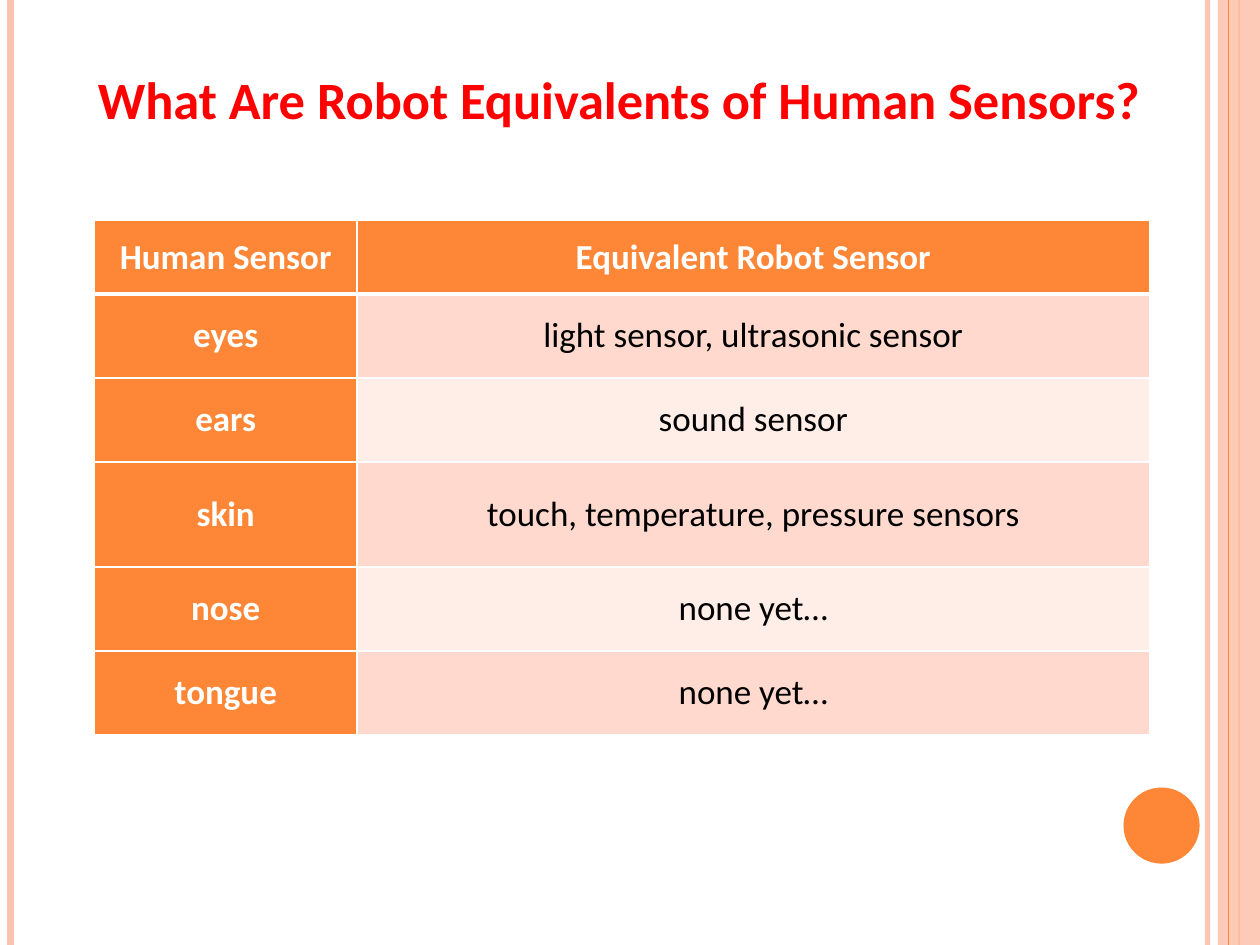
from dataclasses import dataclass

from lxml.etree import SubElement
from pptx import Presentation
from pptx.dml.color import RGBColor
from pptx.enum.shapes import MSO_CONNECTOR, MSO_SHAPE
from pptx.enum.text import MSO_ANCHOR, MSO_AUTO_SIZE, PP_ALIGN
from pptx.oxml.ns import qn
from pptx.util import Emu, Pt

EMU_PER_PX = 9525
WIDTH, HEIGHT = 960, 720


@dataclass(frozen=True)
class Theme:
    font: str = "Calibri"
    title_size: int = 30
    table_size: int = 20
    title: str = "FF0000"
    accent: str = "FE8637"
    pale: str = "FEC3AE"
    bands: tuple = ("FFD9CE", "FFEDE8")
    light: str = "FFFFFF"
    dark: str = "000000"


def px(n):
    return Emu(n * EMU_PER_PX)


def set_alpha(fill_parent, percent):
    """Make the solid fill directly inside fill_parent partly transparent."""
    color = fill_parent.find(qn("a:solidFill"))[0]
    SubElement(color, qn("a:alpha"), val=str(percent * 1000))


class SlideBuilder:
    """Draws elements on the current slide in one theme."""

    def __init__(self, prs, theme):
        self.theme = theme
        self.s = prs.slides.add_slide(prs.slide_layouts[5])

    def text(self, tf, text, size, color, bold):
        p = tf.paragraphs[0]
        p.alignment = PP_ALIGN.CENTER
        r = p.add_run()
        r.text = text
        r.font.name = self.theme.font
        r.font.size = Pt(size)
        r.font.bold = bold
        r.font.color.rgb = RGBColor.from_string(color)

    def vertical_line(self, x, color, width, alpha=None):
        line = self.s.shapes.add_connector(
            MSO_CONNECTOR.STRAIGHT, px(x), px(0), px(x), px(HEIGHT))
        line.line.color.rgb = RGBColor.from_string(color)
        line.line.width = Pt(width)
        sp_pr = line._element.spPr
        if alpha:
            set_alpha(sp_pr.find(qn("a:ln")), alpha)
        SubElement(sp_pr, qn("a:effectLst"))

    def shape(self, kind, x, y, w, h, color, alpha=None):
        sp = self.s.shapes.add_shape(kind, px(x), px(y), px(w), px(h))
        sp.shadow.inherit = False
        sp.fill.solid()
        sp.fill.fore_color.rgb = RGBColor.from_string(color)
        sp.line.fill.background()
        if alpha:
            set_alpha(sp._element.spPr, alpha)

    def title(self, text, x, y, w, h):
        sp = self.s.shapes.title
        sp.left, sp.top, sp.width, sp.height = px(x), px(y), px(w), px(h)
        tf = sp.text_frame
        tf.word_wrap = True
        tf.auto_size = MSO_AUTO_SIZE.NONE
        tf.vertical_anchor = MSO_ANCHOR.BOTTOM
        self.text(tf, text, self.theme.title_size, self.theme.title, True)

    def border(self, cell, side, width):
        ln = SubElement(cell._tc.get_or_add_tcPr(), qn(f"a:ln{side}"), w=str(Pt(width)))
        SubElement(SubElement(ln, qn("a:solidFill")), qn("a:srgbClr"), val=self.theme.light)

    def cell(self, cell, text, row, col):
        """Headings fill the first row and column; the rest is banded."""
        theme = self.theme
        heading = row == 0 or col == 0
        cell.vertical_anchor = MSO_ANCHOR.MIDDLE
        cell.margin_left = cell.margin_right = px(7)
        cell.margin_top = cell.margin_bottom = 0
        widths = {"L": 1, "R": 1, "T": 3 if row == 1 else 1, "B": 3 if row == 0 else 1}
        for side, width in widths.items():
            self.border(cell, side, width)
        cell.fill.solid()
        fill = theme.accent if heading else theme.bands[(row - 1) % 2]
        cell.fill.fore_color.rgb = RGBColor.from_string(fill)
        color = theme.light if heading else theme.dark
        self.text(cell.text_frame, text, theme.table_size, color, heading)

    def table(self, x, y, col_widths, row_heights, rows):
        table = self.s.shapes.add_table(
            len(rows), len(col_widths), px(x), px(y),
            px(sum(col_widths)), px(sum(row_heights))).table
        table.first_col = True
        for column, w in zip(table.columns, col_widths):
            column.width = px(w)
        for i, (h, texts) in enumerate(zip(row_heights, rows)):
            table.rows[i].height = px(h)
            for j, text in enumerate(texts):
                self.cell(table.cell(i, j), text, i, j)


SENSORS = [
    ("Human Sensor", "Equivalent Robot Sensor"),
    ("eyes", "light sensor, ultrasonic sensor"),
    ("ears", "sound sensor"),
    ("skin", "touch, temperature, pressure sensors"),
    ("nose", "none yet…"),
    ("tongue", "none yet…"),
]


def main():
    prs = Presentation()
    prs.slide_width, prs.slide_height = px(WIDTH), px(HEIGHT)
    theme = Theme()
    slide = SlideBuilder(prs, theme)

    slide.vertical_line(920, theme.pale, 3, alpha=93)
    slide.vertical_line(8, theme.pale, 4.5)
    slide.vertical_line(944, theme.accent, 1.5)
    slide.shape(MSO_SHAPE.RECTANGLE, 928, 0, 32, HEIGHT, theme.pale, alpha=87)
    slide.vertical_line(936, theme.accent, 0.75)
    slide.shape(MSO_SHAPE.OVAL, 856, 600, 58, 58, theme.accent)

    slide.title("What Are Robot Equivalents of Human Sensors?", 40, 48, 864, 56)
    slide.table(72, 168, (200, 604), (56, 64, 64, 80, 64, 64), SENSORS)
    prs.save("out.pptx")


if __name__ == "__main__":
    main()
